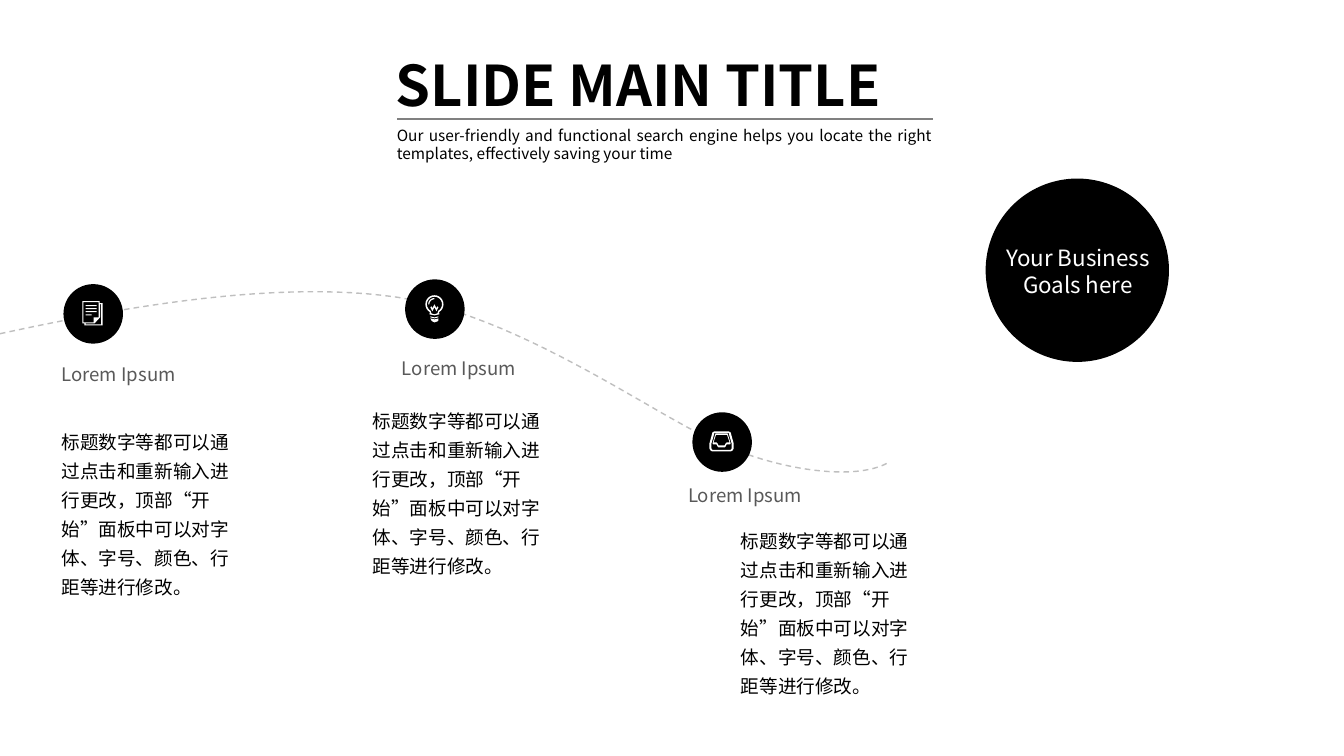
from math import cos, radians, sin

from lxml.etree import SubElement
from pptx import Presentation
from pptx.dml.color import RGBColor
from pptx.enum.dml import MSO_LINE
from pptx.enum.shapes import MSO_CONNECTOR, MSO_SHAPE
from pptx.enum.text import MSO_AUTO_SIZE, PP_ALIGN
from pptx.oxml.ns import qn
from pptx.util import Cm, Pt

BLACK = RGBColor(0x00, 0x00, 0x00)
WHITE = RGBColor(0xFF, 0xFF, 0xFF)
DARK_GREY = RGBColor(0x59, 0x59, 0x59)
MID_GREY = RGBColor(0x80, 0x80, 0x80)
LIGHT_GREY = RGBColor(0xBF, 0xBF, 0xBF)
FONT = "Noto Sans CJK SC"
BADGE = 1.5
ICON_UNIT = 0.0254
BODY = "标题数字等都可以通过点击和重新输入进行更改，顶部“开始”面板中可以对字体、字号、颜色、行距等进行修改。"

presentation = Presentation()
presentation.slide_width = Cm(33.87)
presentation.slide_height = Cm(19.05)
slide = presentation.slides.add_slide(presentation.slide_layouts[6])
shapes = slide.shapes


def add_text(text, left, top, width, height, size, color=BLACK, bold=False,
             align=PP_ALIGN.LEFT, spacing=None, fill=None):
    box = shapes.add_textbox(Cm(left), Cm(top), Cm(width), Cm(height))
    if fill is not None:
        box.fill.solid()
        box.fill.fore_color.rgb = fill
    frame = box.text_frame
    frame.word_wrap = True
    frame.auto_size = MSO_AUTO_SIZE.SHAPE_TO_FIT_TEXT
    paragraph = frame.paragraphs[0]
    paragraph.alignment = align
    paragraph.line_spacing = spacing
    run = paragraph.add_run()
    run.text = text
    run.font.name = FONT
    run.font.size = Pt(size)
    run.font.bold = bold
    run.font.color.rgb = color
    SubElement(run.font._element, qn("a:ea")).set("typeface", FONT)


def add_outline(contours, left=0, top=0, unit=1, closed=True):
    """Draw one freeform from lists of points, measured in units from left and top."""
    placed = [[(Cm(left + x * unit), Cm(top + y * unit)) for x, y in points]
              for points in contours]
    builder = shapes.build_freeform(*placed[0][0])
    for index, points in enumerate(placed):
        if index:
            builder.move_to(*points[0])
        builder.add_line_segments(points[1:], close=closed)
    outline = builder.convert_to_shape()
    outline.shadow.inherit = False
    return outline


# Dashed road through the three milestones
road_knots = [(0, 8.41), (3.28, 7.7), (7.04, 7.06), (10.01, 7.49), (13, 7.95),
              (16.21, 10.26), (17.91, 11.07), (19.61, 11.89), (21.59, 12.12),
              (22.38, 11.66)]
STEPS = 24
road_points = [road_knots[0]]
for first in range(0, len(road_knots) - 1, 3):
    for step in range(1, STEPS + 1):
        t = step / STEPS
        weights = ((1 - t) ** 3, 3 * t * (1 - t) ** 2, 3 * t * t * (1 - t), t ** 3)
        curve = list(zip(weights, road_knots[first:first + 4]))
        road_points.append((sum(w * knot[0] for w, knot in curve),
                            sum(w * knot[1] for w, knot in curve)))
road = add_outline([road_points], closed=False)
road.fill.background()
road.line.color.rgb = LIGHT_GREY
road.line.width = Pt(1)
road.line.dash_style = MSO_LINE.DASH

# Icon contours
text_lines = [[(3, y), (right, y), (right, y + 1), (3, y + 1)]
              for y, right in ((4, 14), (7, 14), (10, 14), (13, 9))]
document_icon = text_lines + [
    [(17, 2), (17, 0), (0, 0), (0, 22), (2, 22), (2, 24), (20, 24), (20, 2)],
    [(1, 21), (1, 1), (16, 1), (16, 16), (11, 16), (11, 21)],
    [(18.5, 23), (3, 23), (3, 22), (12, 22), (17.5, 16), (17.5, 3), (18.5, 3)],
]
glass_outer, glass_inner, shine_outer, shine_inner = [
    [(9 + radius * cos(radians(angle)), 9 + radius * sin(radians(angle)))
     for angle in range(start, stop + 1, 15)]
    for radius, start, stop in ((9, 120, 420), (7.5, 120, 420),
                                (6.2, 180, 270), (5, 180, 270))]
bulb_icon = [
    glass_outer + [(14, 19), (9, 20), (4, 19)],
    glass_inner + [(12, 18), (9, 19), (6, 18)],
    shine_outer + shine_inner[::-1],
    [(11, 13), (9, 9), (7, 13), (6, 11), (5, 12), (7, 16), (9, 12), (11, 16),
     (13, 12), (12, 11)],
    [(5, 21), (5, 22), (9, 23), (13, 22), (13, 21), (9, 22)],
    [(5, 23), (6, 25), (7, 26), (9, 27), (12, 26), (13, 25), (13, 23), (9, 24)],
]
tray_case = [
    [(24, 12), (21, 1), (19, 0), (5, 0), (3, 1), (0, 12), (0, 17), (1, 19),
     (3, 20), (21, 20), (23, 19), (24, 17)],
    [(22, 17), (21, 18.5), (3, 18.5), (2, 17), (2, 12), (5, 1.5), (19, 1.5), (22, 12)],
]
tray_slot = [
    [(18, 2), (6, 2), (3, 12), (3.5, 13), (7, 13), (8, 15), (9, 16), (15, 16),
     (16, 15), (17, 13), (20.5, 13), (21, 12)],
    [(18, 11), (17, 11), (16, 12), (15, 14), (9, 14), (8, 12), (7, 11), (4, 11),
     (6.5, 3.5), (17.5, 3.5), (20, 11)],
]

# Milestones: badge, icon parts and icon corner, label, body text
milestones = [
    ((17.45, 10.39), [tray_case, tray_slot], (17.88, 10.87), (17.09, 12.07), (18.42, 13.06)),
    ((1.6, 7.16), [document_icon], (2.08, 7.59), (1.3, 9.02), (1.3, 10.57)),
    ((10.21, 7.04), [bulb_icon], (10.72, 7.44), (9.88, 8.86), (9.14, 10.03)),
]
for badge_corner, icon_parts, icon_corner, label_corner, body_corner in milestones:
    badge = shapes.add_shape(MSO_SHAPE.ROUNDED_RECTANGLE, *map(Cm, badge_corner),
                             Cm(BADGE), Cm(BADGE))
    badge.adjustments[0] = 0.5
    badge.shadow.inherit = False
    badge.fill.solid()
    badge.fill.fore_color.rgb = BLACK
    badge.line.fill.background()
    for contours in icon_parts:
        icon = add_outline(contours, *icon_corner, unit=ICON_UNIT)
        icon.fill.solid()
        icon.fill.fore_color.rgb = WHITE
        icon.line.fill.background()
    add_text("Lorem Ipsum", *label_corner, 4.29, 0.84, size=13.3, color=DARK_GREY)
    add_text(BODY, *body_corner, 5.16, 4.7, size=13.3, spacing=1.3)

# Goal circle
goal = shapes.add_shape(MSO_SHAPE.OVAL, Cm(24.84), Cm(4.5), Cm(4.62), Cm(4.62))
goal.shadow.inherit = False
goal.fill.solid()
goal.fill.fore_color.rgb = BLACK
goal.line.fill.background()
add_text("Your Business Goals here", 25.02, 6.02, 4.29, 1.63, size=16, color=WHITE,
         align=PP_ALIGN.CENTER, fill=BLACK)

# Heading
add_text("SLIDE MAIN TITLE", 9.73, 1.14, 14.05, 1.98, size=40, bold=True,
         align=PP_ALIGN.JUSTIFY)
add_text("Our user-friendly and functional search engine helps you locate the right "
         "templates, effectively saving your time", 9.75, 3.05, 14, 1.19, size=11,
         align=PP_ALIGN.JUSTIFY)
for rule_y, rule_color in ((3, MID_GREY), (3.05, WHITE)):
    rule = shapes.add_connector(MSO_CONNECTOR.STRAIGHT, Cm(10.01), Cm(rule_y),
                                Cm(23.5), Cm(rule_y))
    rule.line.color.rgb = rule_color
    rule.line.width = Pt(1)
    SubElement(rule._element.spPr, qn("a:effectLst"))

presentation.save("out.pptx")
